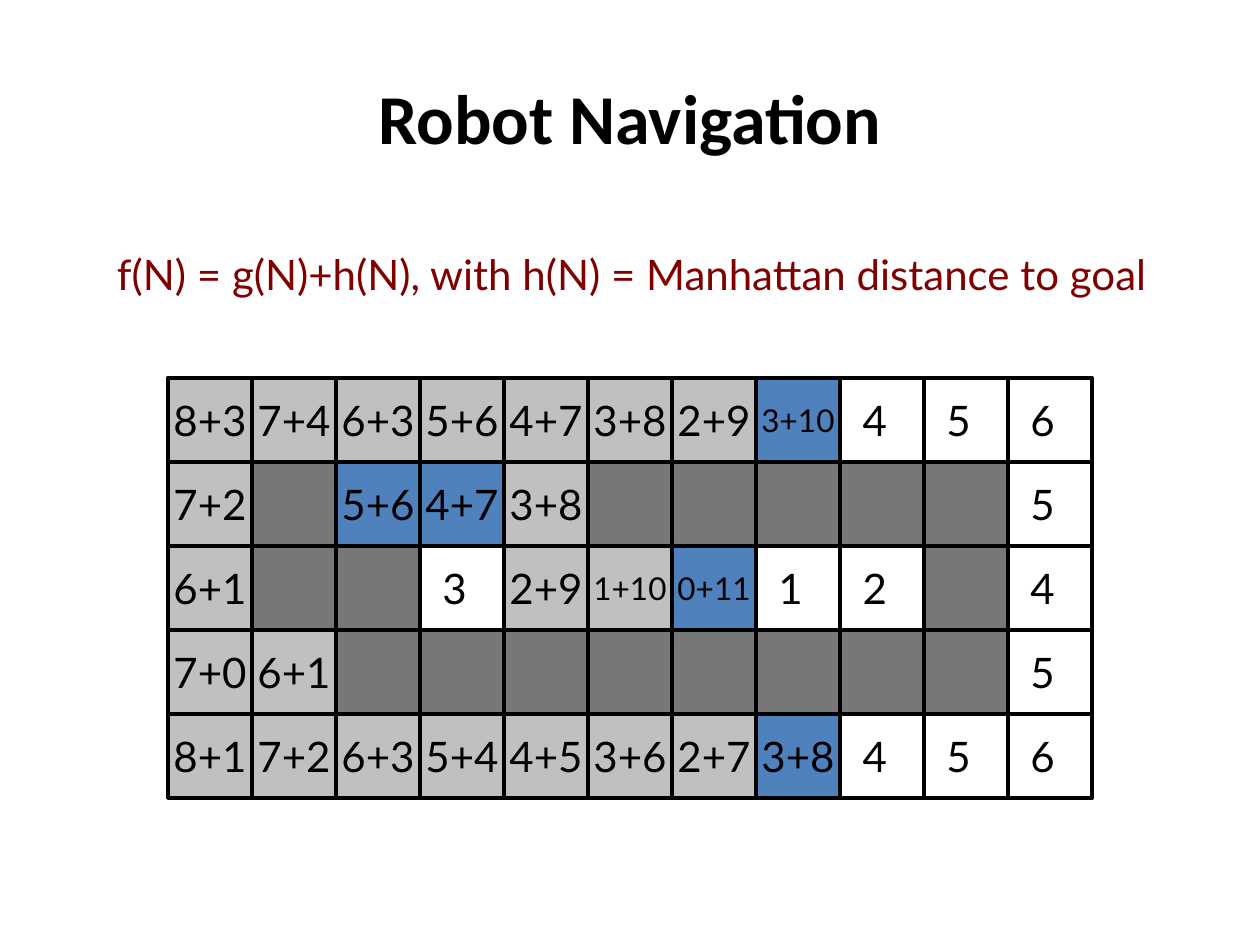
from lxml import etree
from pptx import Presentation
from pptx.dml.color import RGBColor
from pptx.enum.shapes import MSO_CONNECTOR, MSO_SHAPE
from pptx.enum.text import MSO_ANCHOR, MSO_AUTO_SIZE, PP_ALIGN
from pptx.oxml.ns import qn
from pptx.util import Inches, Pt

RECTANGLE = MSO_SHAPE.RECTANGLE
STRAIGHT = MSO_CONNECTOR.STRAIGHT
TOP, MIDDLE = MSO_ANCHOR.TOP, MSO_ANCHOR.MIDDLE
LEFT, CENTER = PP_ALIGN.LEFT, PP_ALIGN.CENTER
FIT_SHAPE = MSO_AUTO_SIZE.SHAPE_TO_FIT_TEXT

BLACK = RGBColor(0x00, 0x00, 0x00)
MAROON = RGBColor(0x80, 0x00, 0x00)
WALL = RGBColor(0x77, 0x77, 0x77)
EXPANDED = RGBColor(0xC0, 0xC0, 0xC0)
FRONTIER = RGBColor(0x4F, 0x81, 0xBD)

CELL = Inches(2 / 3)
GRID_LEFT, GRID_TOP = Inches(4 / 3), Inches(3)
LABEL_INSET = Inches(0.08)
BORDER = Pt(2.25)

MAZE = [
    ["8+3", "7+4", "6+3", "5+6", "4+7", "3+8", "2+9", "3+10", "4", "5", "6"],
    ["7+2", "#", "5+6", "4+7", "3+8", "#", "#", "#", "#", "#", "5"],
    ["6+1", "#", "#", "3", "2+9", "1+10", "0+11", "1", "2", "#", "4"],
    ["7+0", "6+1", "#", "#", "#", "#", "#", "#", "#", "#", "5"],
    ["8+1", "7+2", "6+3", "5+4", "4+5", "3+6", "2+7", "3+8", "4", "5", "6"],
]
FRONTIER_CELLS = {(0, 7), (1, 2), (1, 3), (2, 6), (4, 7)}
GRID_WIDTH, GRID_HEIGHT = CELL * len(MAZE[0]), CELL * len(MAZE)


def write(holder, text, size=24, font="Lato", color=BLACK, bold=False,
          align=LEFT, anchor=TOP, wrap=False):
    frame = holder.text_frame
    frame.word_wrap = wrap
    frame.vertical_anchor = anchor
    paragraph = frame.paragraphs[0]
    paragraph.alignment = align
    run = paragraph.add_run()
    run.text = text
    run.font.size = Pt(size)
    run.font.name = font
    run.font.bold = bold
    run.font.color.rgb = color


def add_box(left, top, width, height, fill=None):
    box = slide.shapes.add_shape(RECTANGLE, left, top, width, height)
    box.shadow.inherit = False
    if fill is None:
        box.fill.background()
    else:
        box.fill.solid()
        box.fill.fore_color.rgb = fill
    box.line.color.rgb = BLACK
    box.line.width = BORDER
    return box


prs = Presentation()
prs.slide_width, prs.slide_height = Inches(10), Inches(7.5)
slide = prs.slides.add_slide(prs.slide_layouts[6])

title = slide.shapes.add_textbox(Inches(0.5), Inches(0.3), Inches(9), Inches(1.25))
write(title, "Robot Navigation", size=40, font="Calibri", bold=True,
      align=CENTER, anchor=MIDDLE, wrap=True)

formula = slide.shapes.add_textbox(Inches(0.83), Inches(1.92), Inches(8.85), Inches(0.5))
write(formula, "f(N) = g(N)+h(N), with h(N) = Manhattan distance to goal", color=MAROON)
formula.text_frame.auto_size = FIT_SHAPE

add_box(GRID_LEFT, GRID_TOP, GRID_WIDTH, GRID_HEIGHT)
grid_right, grid_bottom = GRID_LEFT + GRID_WIDTH, GRID_TOP + GRID_HEIGHT
column_edges = [GRID_LEFT + CELL * i for i in range(1, len(MAZE[0]))]
row_edges = [GRID_TOP + CELL * i for i in range(1, len(MAZE))]
grid_lines = [(x, GRID_TOP, x, grid_bottom) for x in column_edges]
grid_lines += [(GRID_LEFT, y, grid_right, y) for y in row_edges]
for ends in grid_lines:
    grid_line = slide.shapes.add_connector(STRAIGHT, *ends)
    grid_line.line.color.rgb = BLACK
    grid_line.line.width = BORDER
    etree.SubElement(grid_line._element.spPr, qn("a:effectLst"))

for row, values in enumerate(MAZE):
    for column, value in enumerate(values):
        x, y = GRID_LEFT + CELL * column, GRID_TOP + CELL * row
        if value == "#":
            add_box(x, y, CELL, CELL, WALL)
        elif "+" in value:
            fill = FRONTIER if (row, column) in FRONTIER_CELLS else EXPANDED
            cost = add_box(x, y, CELL, CELL, fill)
            write(cost, value, size=18 if len(value) > 3 else 24,
                  align=CENTER, anchor=MIDDLE)
        else:
            distance = slide.shapes.add_textbox(
                x + LABEL_INSET, y + LABEL_INSET, Inches(0.38), Inches(0.5))
            write(distance, value)
            distance.text_frame.auto_size = FIT_SHAPE

prs.save("out.pptx")
